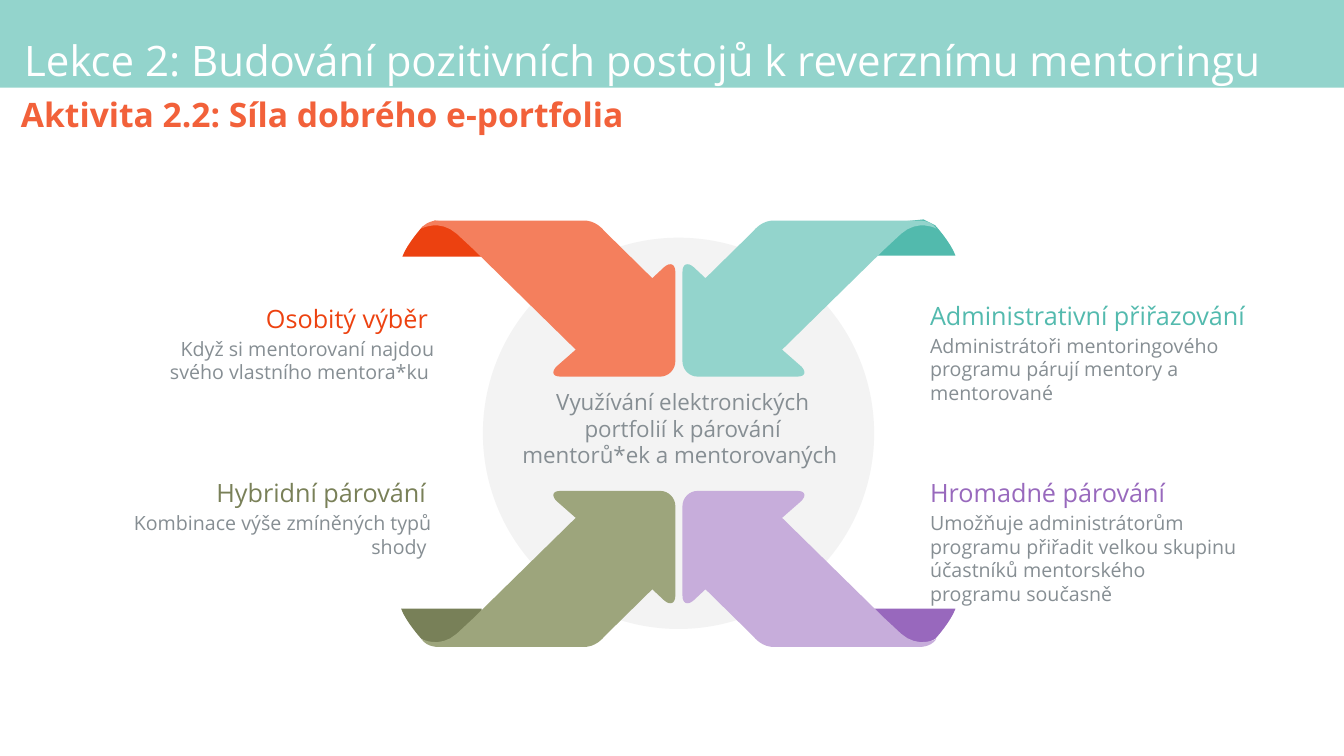
"""Builds the slide on four ways to pair mentors around a circle of arrows."""
from lxml import etree
from pptx import Presentation
from pptx.dml.color import RGBColor
from pptx.enum.shapes import MSO_SHAPE
from pptx.enum.text import PP_ALIGN
from pptx.oxml.ns import qn
from pptx.util import Cm, Pt

RECT, OVAL = MSO_SHAPE.RECTANGLE, MSO_SHAPE.OVAL
LEFT, RIGHT = PP_ALIGN.LEFT, PP_ALIGN.RIGHT
MID, FULL = PP_ALIGN.CENTER, PP_ALIGN.JUSTIFY
GREY = "868E93"
STEPS = 8

deck = Presentation()
deck.slide_width, deck.slide_height = Cm(33.87), Cm(19.05)
slide = deck.slides.add_slide(deck.slide_layouts[6])
shapes = slide.shapes


def paint(shape, color):
    shape.shadow.inherit = False
    shape.fill.solid()
    shape.fill.fore_color.rgb = RGBColor.from_string(color)
    shape.line.fill.background()


def write(text, x, y, w, h, size, color, align=LEFT):
    box = shapes.add_textbox(Cm(x), Cm(y), Cm(w), Cm(h))
    box.text_frame.word_wrap = True
    para = box.text_frame.paragraphs[0]
    para.text, para.alignment = text, align
    para.font.name, para.font.size = "Open Sans", Pt(size)
    para.font.color.rgb = RGBColor.from_string(color)
    return para


band = shapes.add_shape(RECT, 0, 0, deck.slide_width, Cm(2.21))
paint(band, "93D4CC")
disc = shapes.add_shape(OVAL, Cm(12.17), Cm(5.99), Cm(9.86), Cm(9.86))
paint(disc, "7F7F7F")
tint = disc.fill._xPr.find(".//" + qn("a:srgbClr"))
etree.SubElement(tint, qn("a:alpha")).set("val", "9000")

# Outlines are distances out from the centre; six numbers make a Bézier curve.
MIDX, MIDY = 17.11, 10.93
FLAP = [(6.97, 4.46), (4.94, 4.46), (4.99, 5.04), (5.47, 5.3), (6.16, 5.37),
        (6.46, 5.22), (6.46, 5.22, 6.85, 4.79, 6.97, 4.46)]
ARROW = [(0.37, 4.2), (0.67, 3.92), (1.89, 5.12),
         (1.89, 5.12, 2.1, 5.4, 2.43, 5.37), (6.03, 5.37),
         (6.03, 5.37, 6.34, 5.4, 6.49, 5.17),
         (6.49, 5.17, 6.03, 5.42, 5.6, 5.04),
         (5.17, 4.64), (2.6, 2.12), (3.09, 1.69),
         (3.21, 1.56, 3.19, 1.44, 2.98, 1.44), (0.47, 1.44),
         (0.27, 1.44, 0.09, 1.61, 0.09, 1.82), (0.09, 4.08),
         (0.09, 4.28, 0.22, 4.33, 0.37, 4.2)]
SIDES = [(-1, -1, 0, 0, "EC4110", "F47F5D"),
         (1, -1, 0, -0.03, "52BAAD", "93D4CC"),
         (-1, 1, -0.03, -0.05, "788058", "9DA57C"),
         (1, 1, 0, -0.05, "9868BD", "C7ADDB")]

flaps = [(FLAP, sx, sy, dx, dy, dark) for sx, sy, dx, dy, dark, pale in SIDES]
arrows = [(ARROW, sx, sy, 0, 0, pale) for sx, sy, dx, dy, dark, pale in SIDES]
for outline, sx, sy, dx, dy, color in flaps + arrows:
    dots = []
    for part in outline:
        if len(part) == 2:
            dots.append(part)
            continue
        x0, y0 = dots[-1]
        x1, y1, x2, y2, x3, y3 = part
        for step in range(1, STEPS + 1):
            t = step / STEPS
            u = 1 - t
            a, b, c, d = u ** 3, 3 * u * u * t, 3 * u * t * t, t ** 3
            dots.append((a * x0 + b * x1 + c * x2 + d * x3,
                         a * y0 + b * y1 + c * y2 + d * y3))
    spots = [(Cm(MIDX + sx * x + dx), Cm(MIDY + sy * y + dy)) for x, y in dots]
    pen = shapes.build_freeform(*spots[0])
    pen.add_line_segments(spots[1:], close=True)
    paint(pen.convert_to_shape(), color)

write("Využívání elektronických portfolií k párování mentorů*ek a mentorovaných ",
      12.9, 9.65, 8.61, 2.31, 16, GREY, MID)

NOTES = [
    ("Administrativní přiřazování",
     "Administrátoři mentoringového programu párují mentory a mentorované",
     23.19, 23.19, 7.44, 9.12, 2.06, "53BAAE", LEFT),
    ("Osobitý výběr ",
     "Když si mentorovaní najdou svého vlastního mentora*ku ",
     5.64, 2.97, 7.52, 5.56, 1.45, "ED4210", RIGHT),
    ("Hromadné párování",
     "Umožňuje administrátorům programu přiřadit velkou skupinu "
     "účastníků mentorského programu současně",
     23.19, 23.19, 11.91, 8.61, 2.64, "9869BD", LEFT),
    ("Hybridní párování ",
     "Kombinace výše zmíněných typů shody ",
     3.96, 2.9, 11.91, 7.19, 1.45, "798058", RIGHT),
]
for head, body, headx, bodyx, y, wide, tall, color, align in NOTES:
    write(body, bodyx, y + 0.84, 8.23, tall, 14, GREY, align)
    write(head, headx, y, wide, 1.02, 18, color, align)

write("Lekce 2: Budování pozitivních postojů k reverznímu mentoringu",
      0.36, 0.74, 33.17, 1.98, 30, "FFFFFF")
topic = write("Aktivita 2.2: Síla dobrého e-portfolia ",
              0.28, 2.36, 33.17, 1.52, 24, "F2613A", FULL)
topic.font.bold = True
topic.line_spacing = 0.9

deck.save("out.pptx")
